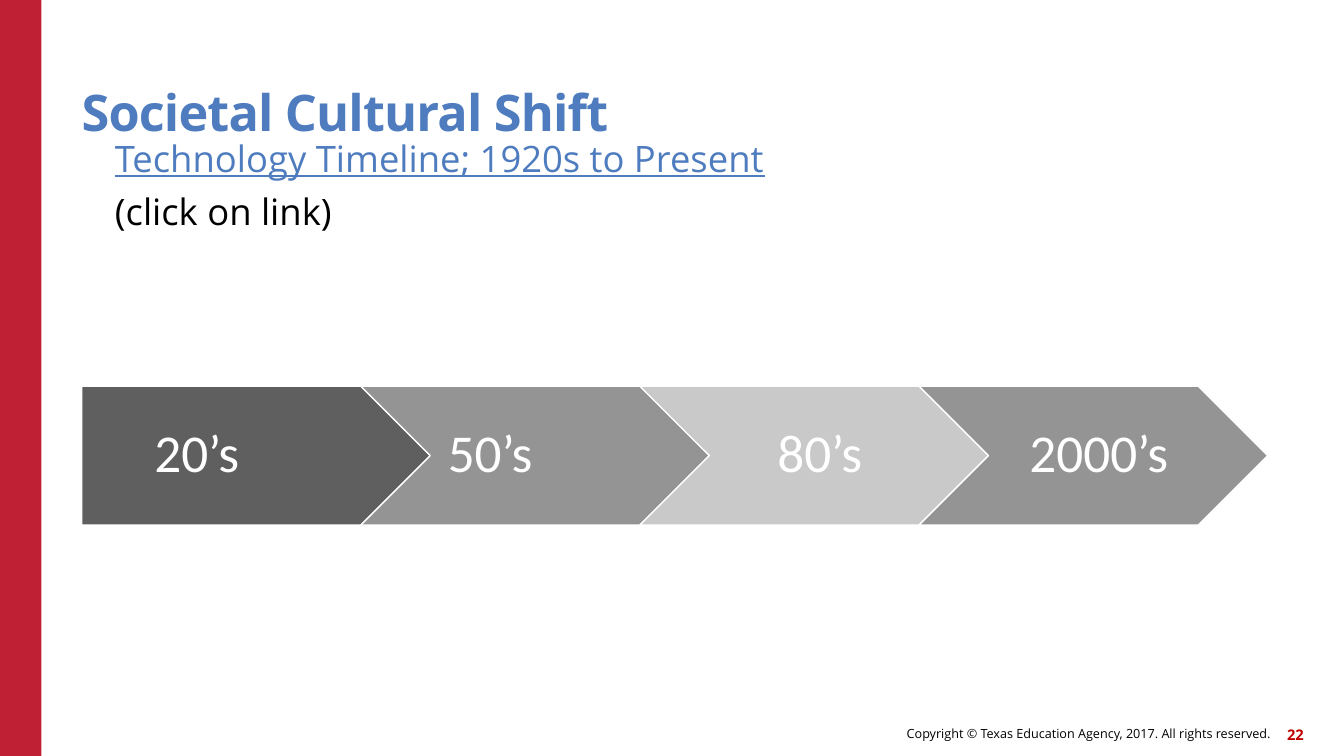
from pptx import Presentation
from pptx.dml.color import RGBColor
from pptx.enum.shapes import MSO_SHAPE
from pptx.enum.text import MSO_ANCHOR, PP_ALIGN
from pptx.util import Inches, Pt

RECTANGLE, PENTAGON, CHEVRON = MSO_SHAPE.RECTANGLE, MSO_SHAPE.PENTAGON, MSO_SHAPE.CHEVRON
TOP, MIDDLE, BOTTOM = MSO_ANCHOR.TOP, MSO_ANCHOR.MIDDLE, MSO_ANCHOR.BOTTOM
LEFT, CENTER, RIGHT = PP_ALIGN.LEFT, PP_ALIGN.CENTER, PP_ALIGN.RIGHT

# Content
TITLE = "Societal Cultural Shift"
LINK = "Technology Timeline; 1920s to Present"
HINT = "(click on link)"
COPYRIGHT = "Copyright © Texas Education Agency, 2017. All rights reserved."
PAGE_NUMBER = "22"
# label, shape, fill, left and right inset of the label
DECADES = [
    ("20’s", PENTAGON, "dark", 0, 0.83),
    ("50’s", CHEVRON, "medium", 0, 0.89),
    ("80’s", CHEVRON, "light", 0.17, 0.06),
    ("2000’s", CHEVRON, "medium", 0.17, 0.06),
]

THEME = {
    "colors": {
        "bar": "C02033", "blue": "4E7CBE", "number": "C00000", "black": "000000",
        "white": "FFFFFF", "dark": "5F5F5F", "medium": "949494", "light": "C9C9C9",
    },
    "fonts": {"main": "Open Sans", "arrow": "Calibri"},
    "sizes": {"title": 36, "body": 26, "arrow": 38, "copyright": 9, "number": 10.5},
}

# Layout
SLIDE_WIDTH, SLIDE_HEIGHT = 13.33, 7.5
MARGIN = 0.81
ARROW_TOP, ARROW_WIDTH, ARROW_HEIGHT = 3.83, 3.46, 1.38
ARROW_STEP = ARROW_WIDTH * 0.8


def color(name):
    return RGBColor.from_string(THEME["colors"][name])


def font_format(size, color_name, font="main", **extra):
    return {"name": THEME["fonts"][font], "size": Pt(THEME["sizes"][size]),
            "color": color_name, **extra}


def write(paragraph, text, formats, align=LEFT, spacing=1.0):
    paragraph.alignment = align
    paragraph.line_spacing = spacing
    run = paragraph.add_run()
    run.text = text
    for name, value in formats.items():
        if name == "color":
            run.font.color.rgb = color(value)
        else:
            setattr(run.font, name, value)


def set_frame(frame, anchor, left=0, right=0, vertical=0):
    settings = {"word_wrap": True, "vertical_anchor": anchor,
                "margin_left": Inches(left), "margin_right": Inches(right),
                "margin_top": Inches(vertical), "margin_bottom": Inches(vertical)}
    for name, value in settings.items():
        setattr(frame, name, value)


def add_text(slide, box, anchor, lines, align=LEFT, spacing=1.0):
    frame = slide.shapes.add_textbox(*map(Inches, box)).text_frame
    set_frame(frame, anchor)
    for index, (text, formats) in enumerate(lines):
        paragraph = frame.add_paragraph() if index else frame.paragraphs[0]
        write(paragraph, text, formats, align, spacing)
        if index:
            paragraph.space_before = Pt(10)


def add_filled(slide, kind, box, fill):
    shape = slide.shapes.add_shape(kind, *map(Inches, box))
    shape.shadow.inherit = False
    shape.fill.solid()
    shape.fill.fore_color.rgb = color(fill)
    return shape


def main():
    presentation = Presentation()
    presentation.slide_width = Inches(SLIDE_WIDTH)
    presentation.slide_height = Inches(SLIDE_HEIGHT)
    slide = presentation.slides.add_slide(presentation.slide_layouts[6])

    # Side bar and footer
    bar = add_filled(slide, RECTANGLE, (0, 0, 0.41, SLIDE_HEIGHT), "bar")
    bar.line.fill.background()
    add_text(slide, (6.14, 7.12, 6.46, 0.32), MIDDLE,
             [(COPYRIGHT, font_format("copyright", "black"))], RIGHT)
    add_text(slide, (12.51, 7.13, 0.42, 0.32), MIDDLE,
             [(PAGE_NUMBER, font_format("number", "number", bold=True))], RIGHT)

    # Title and indented body
    add_text(slide, (MARGIN, 0.45, 11, 0.96), BOTTOM,
             [(TITLE, font_format("title", "blue", bold=True))], spacing=0.9)
    slide.shapes[-1].text_frame.paragraphs[0].runs[0].font._element.set("spc", "-60")
    add_text(slide, (MARGIN + 0.33, 1.4, 11.76, 1.68), TOP,
             [(LINK, font_format("body", "blue", underline=True)),
              (HINT, font_format("body", "black"))], spacing=0.9)

    # Timeline arrows
    for index, (label, kind, fill, left, right) in enumerate(DECADES):
        box = (MARGIN + index * ARROW_STEP, ARROW_TOP, ARROW_WIDTH, ARROW_HEIGHT)
        arrow = add_filled(slide, kind, box, fill)
        arrow.line.color.rgb = color("white")
        arrow.line.width = Pt(1)
        set_frame(arrow.text_frame, MIDDLE, left, right, 0.11)
        write(arrow.text_frame.paragraphs[0], label,
              font_format("arrow", "white", "arrow"), CENTER, 0.9)

    presentation.save("out.pptx")


if __name__ == "__main__":
    main()
